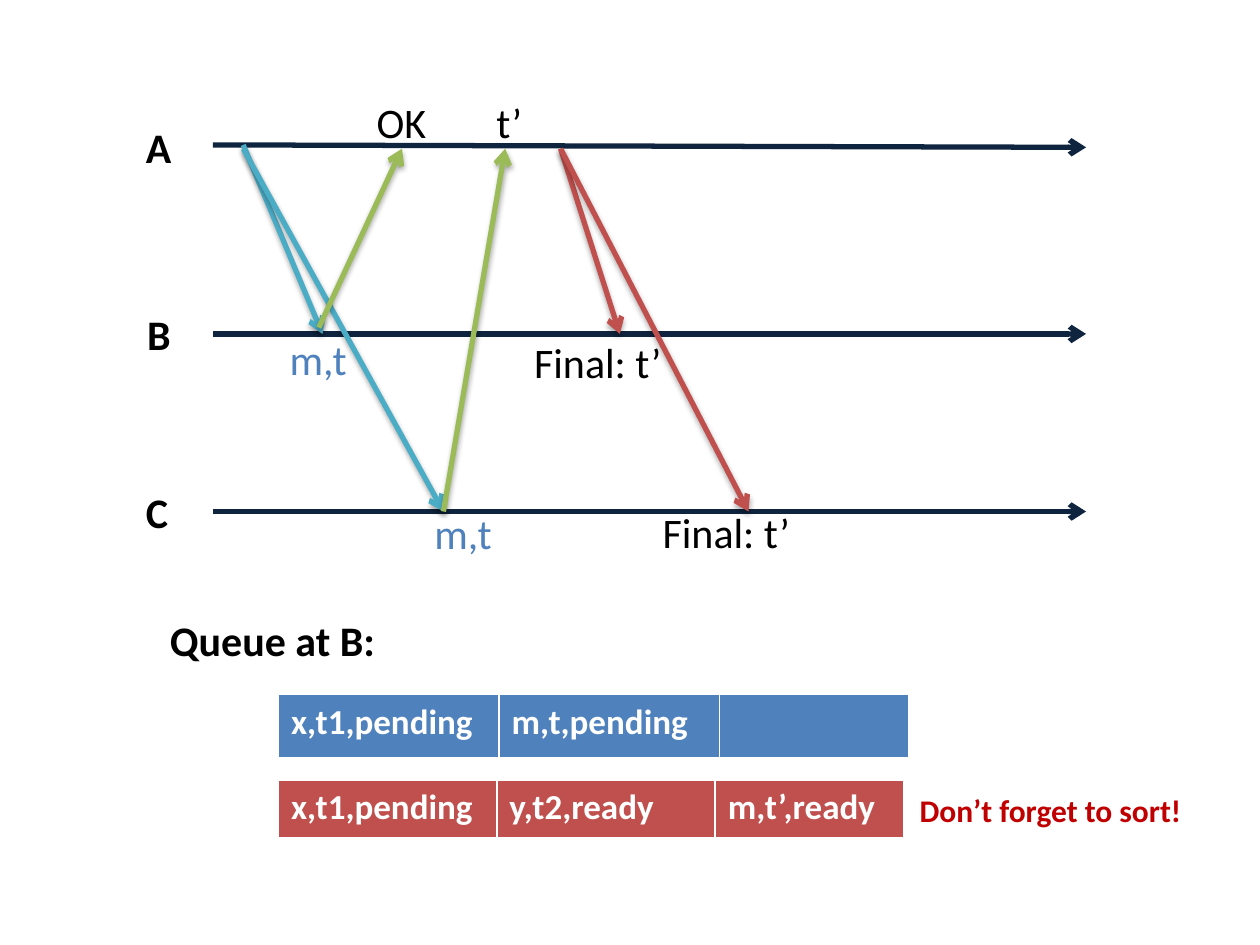
import pptx
import pptx.util
import pptx.dml.color
import pptx.enum.shapes
import pptx.enum.text
import pptx.oxml
import pptx.oxml.ns
from lxml import etree

Pt = pptx.util.Pt
RGBColor = pptx.dml.color.RGBColor
qn = pptx.oxml.ns.qn

COLORS = {
    "timeline": "0F243E",
    "multicast": "4BACC6",
    "reply": "9BBB59",
    "final": "C0504D",
    "message": "4F81BD",
    "text": "000000",
    "white": "FFFFFF",
    "reminder": "C00000",
}
FONT = "Calibri"

presentation = pptx.Presentation()
presentation.slide_width = Pt(720)
presentation.slide_height = Pt(540)
slide = presentation.slides.add_slide(presentation.slide_layouts[6])


def add_arrow(start, end, color, shadow=True):
    arrow = slide.shapes.add_connector(
        pptx.enum.shapes.MSO_CONNECTOR.STRAIGHT,
        Pt(start[0]), Pt(start[1]), Pt(end[0]), Pt(end[1]))
    arrow.line.width = Pt(3)
    arrow.line.color.rgb = RGBColor.from_string(COLORS[color])
    etree.SubElement(arrow.line._get_or_add_ln(), qn("a:tailEnd"), type="arrow")
    effects = etree.SubElement(arrow._element.spPr, qn("a:effectLst"))
    if shadow:
        outer = etree.SubElement(
            effects, qn("a:outerShdw"), blurRad=str(Pt(3.15)),
            dist=str(Pt(1.81)), dir="5400000", rotWithShape="0")
        black = etree.SubElement(outer, qn("a:srgbClr"), val="000000")
        etree.SubElement(black, qn("a:alpha"), val="35000")


def add_run(paragraph, text, size, color, bold):
    run = paragraph.add_run()
    run.text = text
    run.font.name = FONT
    run.font.size = Pt(size)
    run.font.bold = bold
    run.font.color.rgb = RGBColor.from_string(COLORS[color])


# Process timelines
for start_y, end_y in [(82.8, 84.2), (190.8, 190.8), (292.3, 292.3)]:
    add_arrow((121.7, start_y), (620.6, end_y), "timeline", shadow=False)

# Messages between processes
for start, end, color in [
    ((139, 82.8), (184.3, 190.8), "multicast"),
    ((139, 85), (253.4, 292.3), "multicast"),
    ((182.2, 187.2), (229.7, 85), "reply"),
    ((253.4, 292.3), (288.7, 85), "reply"),
    ((320.4, 85), (354.2, 190.8), "final"),
    ((320.4, 85), (427.7, 292.3), "final"),
]:
    add_arrow(start, end, color)

# Labels: text, left, top, width, height, size, color, bold
for text, left, top, width, height, size, color, bold in [
    ("A", 76.3, 66.2, 29.5, 36, 24, "text", True),
    ("B", 77, 172.8, 28.8, 36, 24, "text", True),
    ("C", 76.3, 274.3, 27.4, 36, 24, "text", True),
    ("m,t", 158.4, 187.2, 47.5, 36, 24, "message", False),
    ("m,t", 241.2, 286.6, 47.5, 36, 24, "message", False),
    ("OK", 208.1, 51.8, 43.2, 36, 24, "text", False),
    ("t’", 276.5, 51.8, 29.5, 36, 24, "text", False),
    ("Final: t’", 298.1, 188.6, 87.8, 36, 24, "text", False),
    ("Final: t’", 371.5, 285.8, 87.8, 36, 24, "text", False),
    ("Queue at B:", 90, 347.8, 133.2, 36, 24, "text", True),
    ("Don’t forget to sort!", 518.4, 448.6, 165.6, 28.8, 18, "reminder", True),
]:
    label = slide.shapes.add_textbox(Pt(left), Pt(top), Pt(width), Pt(height))
    label.text_frame.word_wrap = False
    label.text_frame.auto_size = pptx.enum.text.MSO_AUTO_SIZE.SHAPE_TO_FIT_TEXT
    add_run(label.text_frame.paragraphs[0], text, size, color, bold)

# Queue states, before and after the final timestamp
for entries, top, height, widths, color in [
    (["x,t1,pending", "m,t,pending", ""], 396.9, 37.2, [126, 126, 108.4], "message"),
    (["x,t1,pending", "y,t2,ready", "m,t’,ready"], 445.7, 33.8, [124.8, 124.8, 107.8], "final"),
]:
    table = slide.shapes.add_table(
        1, len(entries), Pt(159.1), Pt(top), Pt(sum(widths)), Pt(height)).table
    table.rows[0].height = Pt(height)
    for column, (entry, width) in enumerate(zip(entries, widths)):
        table.columns[column].width = Pt(width)
        cell = table.cell(0, column)
        for side, weight in [("L", 1), ("R", 1), ("T", 1), ("B", 3)]:
            border = etree.SubElement(
                cell._tc.get_or_add_tcPr(), qn("a:ln" + side), w=str(Pt(weight)))
            solid = etree.SubElement(border, qn("a:solidFill"))
            etree.SubElement(solid, qn("a:srgbClr"), val=COLORS["white"])
        cell.fill.solid()
        cell.fill.fore_color.rgb = RGBColor.from_string(COLORS[color])
        if entry:
            add_run(cell.text_frame.paragraphs[0], entry, 20, "white", True)

presentation.save("out.pptx")
